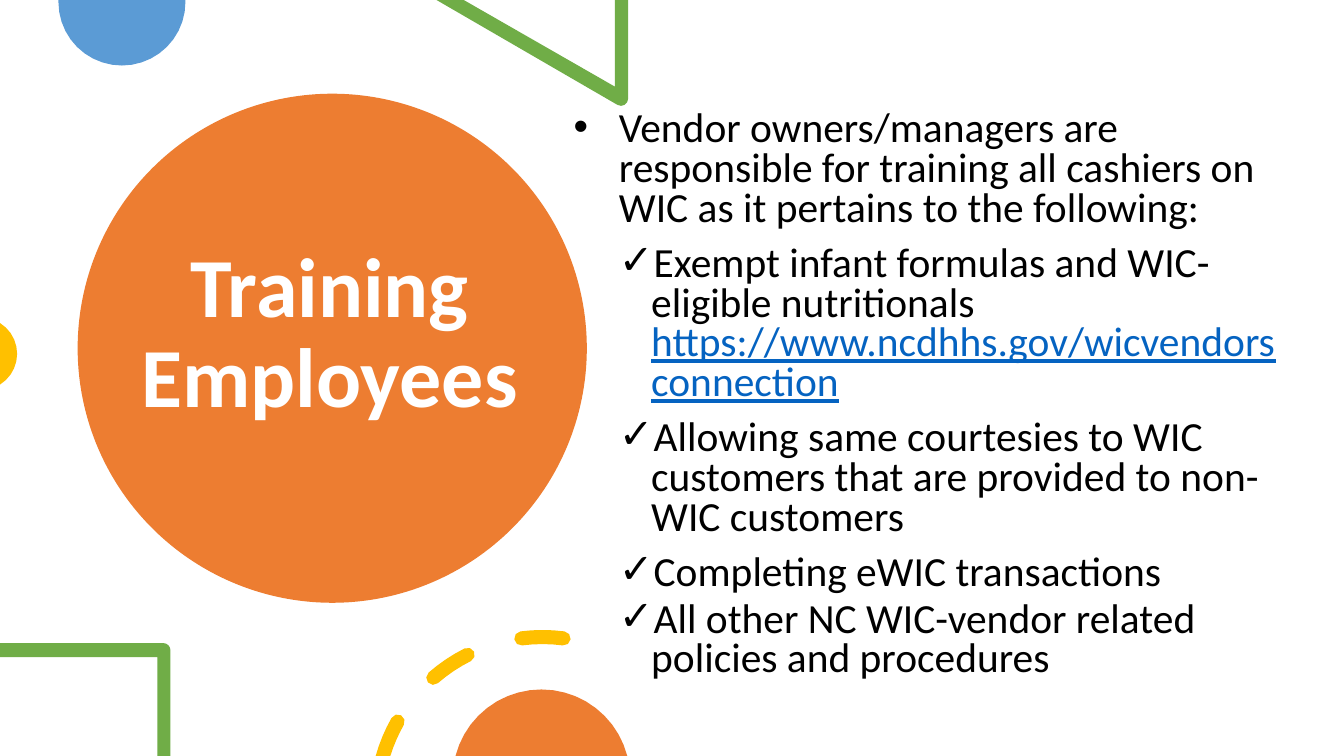
from math import acos, asin, cos, degrees, radians, sin

from lxml import etree
from pptx import Presentation
from pptx.dml.color import RGBColor
from pptx.enum.shapes import MSO_SHAPE
from pptx.enum.text import MSO_ANCHOR, MSO_AUTO_SIZE, PP_ALIGN
from pptx.oxml.ns import qn
from pptx.util import Inches, Pt

OVAL = MSO_SHAPE.OVAL
MIDDLE, CENTER = MSO_ANCHOR.MIDDLE, PP_ALIGN.CENTER
NO_FIT = MSO_AUTO_SIZE.NONE

# Content
WIDTH, HEIGHT = 13.33, 7.5
FONT = "Calibri"
ORANGE, BLUE, GREEN, YELLOW = "ED7D31", "5B9BD5", "70AD47", "FFC000"
WHITE, BLACK, LINK = "FFFFFF", "000000", "0563C1"
TITLE = "Training Employees"
INTRO = ("Vendor owners/managers are responsible for training all cashiers "
         "on WIC as it pertains to the following:")
# Each topic: text, web address, points of space after
TOPICS = [
    ("Exempt infant formulas and WIC-eligible nutritionals ",
     "https://www.ncdhhs.gov/wicvendorsconnection", 6),
    ("Allowing same courtesies to WIC customers that are provided to "
     "non-WIC customers", "", 6),
    ("Completing eWIC transactions", "", 0),
    ("All other NC WIC-vendor related policies and procedures", "", 0),
]


def color(value):
    return RGBColor.from_string(value)


def paint(shape, fill):
    shape.shadow.inherit = False
    shape.fill.solid()
    shape.fill.fore_color.rgb = color(fill)
    shape.line.fill.background()


def arc(cx, cy, radius, start, end, steps=4):
    """Points on an arc; angles in degrees, clockwise from the right."""
    angles = [radians(start + (end - start) * i / steps)
              for i in range(steps + 1)]
    return [(cx + radius * cos(a), cy + radius * sin(a)) for a in angles]


def outline(fill, *contours):
    """One filled freeform made of closed contours given in inches."""
    builder = None
    for contour in contours:
        points = [(Inches(x), Inches(y)) for x, y in contour]
        if builder is None:
            builder = s.shapes.build_freeform(*points[0])
        else:
            builder.move_to(*points[0])
        builder.add_line_segments(points[1:], close=True)
    paint(builder.convert_to_shape(), fill)


def style(run, size, rgb, bold=False, underline=False):
    font = run.font
    font.name, font.size, font.color.rgb = FONT, Pt(size), color(rgb)
    font.bold, font.underline = bold, underline


def bullet(p, char, font, left, hanging):
    pPr = p._p.get_or_add_pPr()
    pPr.set("marL", str(Inches(left)))
    pPr.set("indent", str(-Inches(hanging)))
    etree.SubElement(pPr, qn("a:buFont")).set("typeface", font)
    etree.SubElement(pPr, qn("a:buChar")).set("char", char)


prs = Presentation()
prs.slide_width, prs.slide_height = Inches(WIDTH), Inches(HEIGHT)
s = prs.slides.add_slide(prs.slide_layouts[5])
title = s.shapes.title

# Large circle, placed behind the title
disc = s.shapes.add_shape(OVAL, Inches(0.77), Inches(0.93),
                          Inches(5.05), Inches(5.05))
paint(disc, ORANGE)
title._element.addprevious(disc._element)

# Title
title.left, title.top = Inches(1.21), Inches(1.1)
title.width, title.height = Inches(4.12), Inches(4.45)
tf = title.text_frame
tf.text = TITLE
tf.word_wrap, tf.auto_size, tf.vertical_anchor = True, NO_FIT, MIDDLE
p = tf.paragraphs[0]
p.alignment, p.line_spacing = CENTER, 0.9
style(p.runs[0], 60, WHITE, bold=True)

# Blue circle cut by the top edge, green corner beside it
outline(BLUE, [(0.58, 0), (1.84, 0)] + arc(1.21, 0.02, 0.63, 0, 180, 20))
outline(GREEN, [(6.1, 0), (6.23, 0)] + arc(6.16, 0.98, 0.07, 0, 120)
        + [(4.33, 0), (4.6, 0), (6.1, 0.86)])

# Yellow circle cut by the left edge
half = degrees(acos(0.19 / 0.36))
outline(YELLOW, arc(-0.19, 3.51, 0.36, -half, half, 10))

# Body text
box = s.shapes.add_textbox(Inches(5.54), Inches(1.05),
                           Inches(7.25), Inches(6.1))
tf = box.text_frame
tf.word_wrap, tf.auto_size = True, NO_FIT
for i, (text, address, after) in enumerate([(INTRO, "", 6)] + TOPICS):
    p = tf.paragraphs[0] if i == 0 else tf.add_paragraph()
    p.text = text
    style(p.runs[0], 29.6, BLACK)
    if address:
        r = p.add_run()
        r.text = address
        style(r, 29.6, LINK, underline=True)
    p.line_spacing, p.space_after = 0.8, Pt(after)
    if i == 0:
        p.space_before = Pt(10)
        bullet(p, "•", "Arial", 0.5, 0.45)
    else:
        p.level, p.space_before = 1, Pt(5)
        bullet(p, "✓", FONT, 0.82, 0.32)

# Green corner at the bottom left
outline(GREEN, [(0, 6.38)] + arc(1.62, 6.45, 0.07, -90, 0)
        + [(1.69, HEIGHT), (1.56, HEIGHT), (1.56, 6.52), (0, 6.52)])

# Dashed ring: round-ended dashes, the first cut by the bottom edge
RING_X, RING_Y, RING_R, CAP = 5.38, 7.97, 1.65, 0.07
OUTER, INNER = RING_R + CAP, RING_R - CAP


def ring(radius, start, end):
    return arc(RING_X, RING_Y, radius, start, end)


def cap(angle, turn):
    x, y = ring(RING_R, angle, angle)[0]
    return arc(x, y, CAP, turn, turn + 180)


def edge_angle(radius):
    return degrees(asin((RING_Y - HEIGHT) / radius)) - 180


CUT_END = -150.5
cut_dash = (ring(OUTER, edge_angle(OUTER), CUT_END) + cap(CUT_END, CUT_END)
            + ring(INNER, CUT_END, edge_angle(INNER)))
dashes = [ring(OUTER, start, end) + cap(end, end)
          + ring(INNER, end, start) + cap(start, start + 180)
          for start, end in [(-131, -116.7), (-97.3, -82.7)]]
outline(YELLOW, cut_dash, *dashes)

# Orange circle cut by the bottom edge
half = degrees(acos(0.22 / 0.88))
outline(ORANGE, arc(5.37, 7.72, 0.88, -90 - half, -90 + half, 20))

prs.save("out.pptx")
